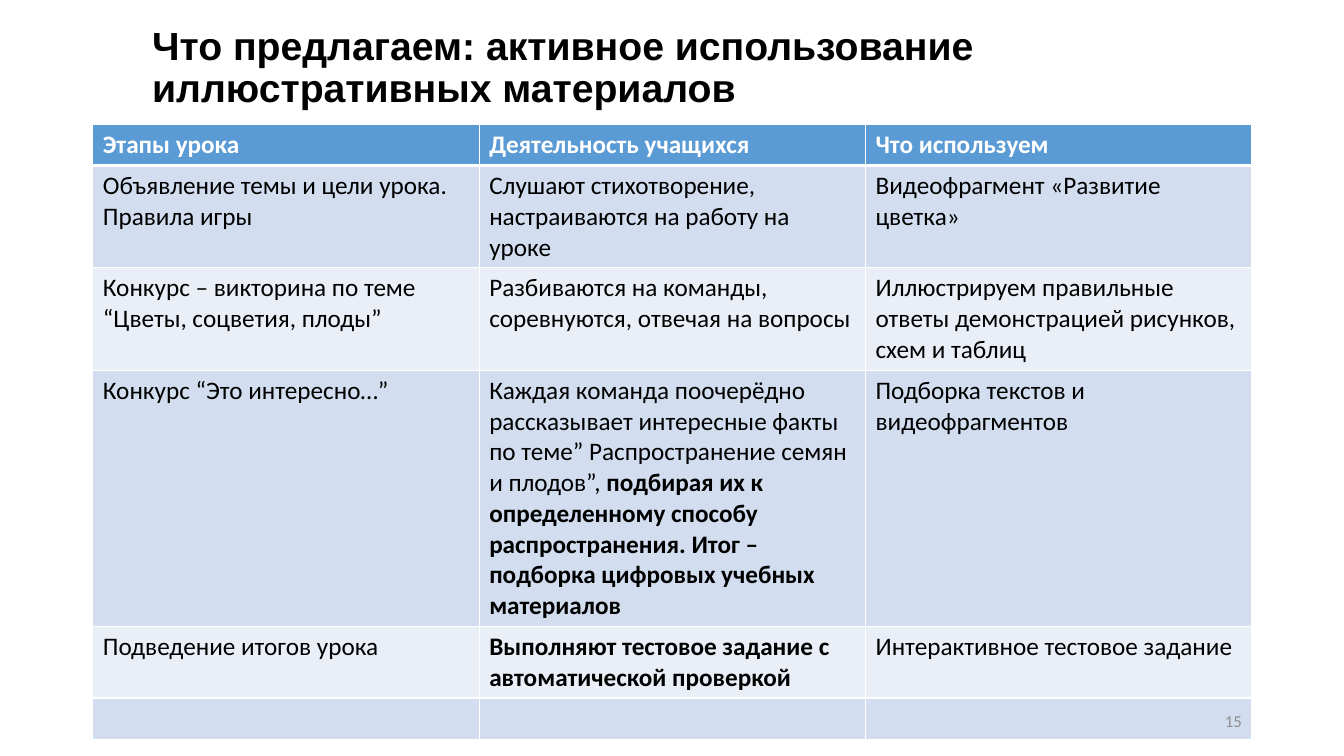
from dataclasses import dataclass

from lxml import etree
from pptx import Presentation
from pptx.dml.color import RGBColor
from pptx.enum.text import MSO_ANCHOR, MSO_AUTO_SIZE, PP_ALIGN
from pptx.oxml.ns import qn
from pptx.util import Cm, Pt

LEFT, RIGHT = PP_ALIGN.LEFT, PP_ALIGN.RIGHT
MIDDLE = MSO_ANCHOR.MIDDLE
NO_FIT = MSO_AUTO_SIZE.NONE

BLACK = RGBColor(0x00, 0x00, 0x00)
WHITE = RGBColor(0xFF, 0xFF, 0xFF)
GREY = RGBColor(0x8C, 0x8C, 0x8C)
BLUE = RGBColor(0x5B, 0x9B, 0xD5)
BANDS = (RGBColor(0xEA, 0xEF, 0xF7), RGBColor(0xD2, 0xDE, 0xEF))


@dataclass
class Entry:
    plain: str = ""
    bold: str = ""


@dataclass
class Stage:
    height: float
    cells: tuple[Entry, Entry, Entry]


STAGES = [
    Stage(1.04, (
        Entry(bold="Этапы урока"),
        Entry(bold="Деятельность учащихся"),
        Entry(bold="Что используем"))),
    Stage(2.58, (
        Entry("Объявление темы и цели урока. Правила игры"),
        Entry("Слушают стихотворение, настраиваются на работу на уроке"),
        Entry("Видеофрагмент «Развитие цветка»"))),
    Stage(2.58, (
        Entry("Конкурс – викторина по теме “Цветы, соцветия, плоды”"),
        Entry("Разбиваются на команды, соревнуются, отвечая на вопросы"),
        Entry("Иллюстрируем правильные ответы демонстрацией рисунков, "
              "схем и таблиц"))),
    Stage(6.45, (
        Entry("Конкурс “Это интересно…”"),
        Entry("Каждая команда поочерёдно рассказывает интересные факты "
              "по теме” Распространение семян и плодов”, ",
              "подбирая их к определенному способу распространения. "
              "Итог – подборка цифровых учебных материалов"),
        Entry("Подборка текстов и видеофрагментов"))),
    Stage(1.8, (
        Entry("Подведение итогов урока"),
        Entry(bold="Выполняют тестовое задание с автоматической проверкой"),
        Entry("Интерактивное тестовое задание"))),
    Stage(1.04, (Entry(), Entry(), Entry())),
]


def style(font, name: str, size: int, color: RGBColor, bold: bool) -> None:
    font.name, font.size, font.bold = name, Pt(size), bold
    font.color.rgb = color


def edge(cell, widths: dict[str, int]) -> None:
    """Draw white cell borders; lines come before the fill."""
    props = cell._tc.get_or_add_tcPr()
    for spot, (side, width) in enumerate(widths.items()):
        line = etree.Element(qn(f"a:ln{side}"), w=str(Pt(width)))
        fill = etree.SubElement(line, qn("a:solidFill"))
        etree.SubElement(fill, qn("a:srgbClr"), val=str(WHITE))
        props.insert(spot, line)


def write(cell, entry: Entry, color: RGBColor) -> None:
    para = cell.text_frame.paragraphs[0]
    style(para.font, "Calibri", 18, color, False)
    for text, bold in ((entry.plain, False), (entry.bold, True)):
        if text:
            run = para.add_run()
            run.text = text
            style(run.font, "Calibri", 18, color, bold)


def add_title(slide, text: str) -> None:
    title = slide.shapes.title
    title.left, title.top = Cm(3.58), Cm(0.43)
    title.width, title.height = Cm(27.97), Cm(2.62)
    frame = title.text_frame
    frame.text = text
    frame.word_wrap, frame.auto_size = True, NO_FIT
    frame.vertical_anchor = MIDDLE
    para = frame.paragraphs[0]
    para.alignment, para.line_spacing = LEFT, 0.9
    style(para.runs[0].font, "Arial", 28, BLACK, True)


def add_stages(slide, stages: list[Stage]) -> None:
    total = sum(stage.height for stage in stages)
    table = slide.shapes.add_table(
        len(stages), 3, Cm(2.34), Cm(3.13), Cm(29.21), Cm(total)).table
    for row, stage in enumerate(stages):
        head = row == 0
        table.rows[row].height = Cm(stage.height)
        for col, entry in enumerate(stage.cells):
            cell = table.cell(row, col)
            cell.fill.solid()
            cell.fill.fore_color.rgb = BLUE if head else BANDS[row % 2]
            edge(cell, {"L": 1, "R": 1, "T": 3 if row == 1 else 1,
                        "B": 3 if head else 1})
            write(cell, entry, WHITE if head else BLACK)


def add_number(slide, text: str) -> None:
    box = slide.shapes.add_textbox(Cm(23.93), Cm(17.65), Cm(7.62), Cm(1.02))
    frame = box.text_frame
    frame.text = text
    frame.word_wrap = True
    frame.vertical_anchor = MIDDLE
    para = frame.paragraphs[0]
    para.alignment = RIGHT
    style(para.runs[0].font, "Calibri", 12, GREY, False)


def main() -> None:
    deck = Presentation()
    deck.slide_width, deck.slide_height = Cm(33.87), Cm(19.05)
    slide = deck.slides.add_slide(deck.slide_layouts[5])
    # Heading
    add_title(slide, "Что предлагаем: активное использование "
                     "иллюстративных материалов")
    # Lesson stages
    add_stages(slide, STAGES)
    # Page number
    add_number(slide, "15")
    deck.save("out.pptx")


if __name__ == "__main__":
    main()
